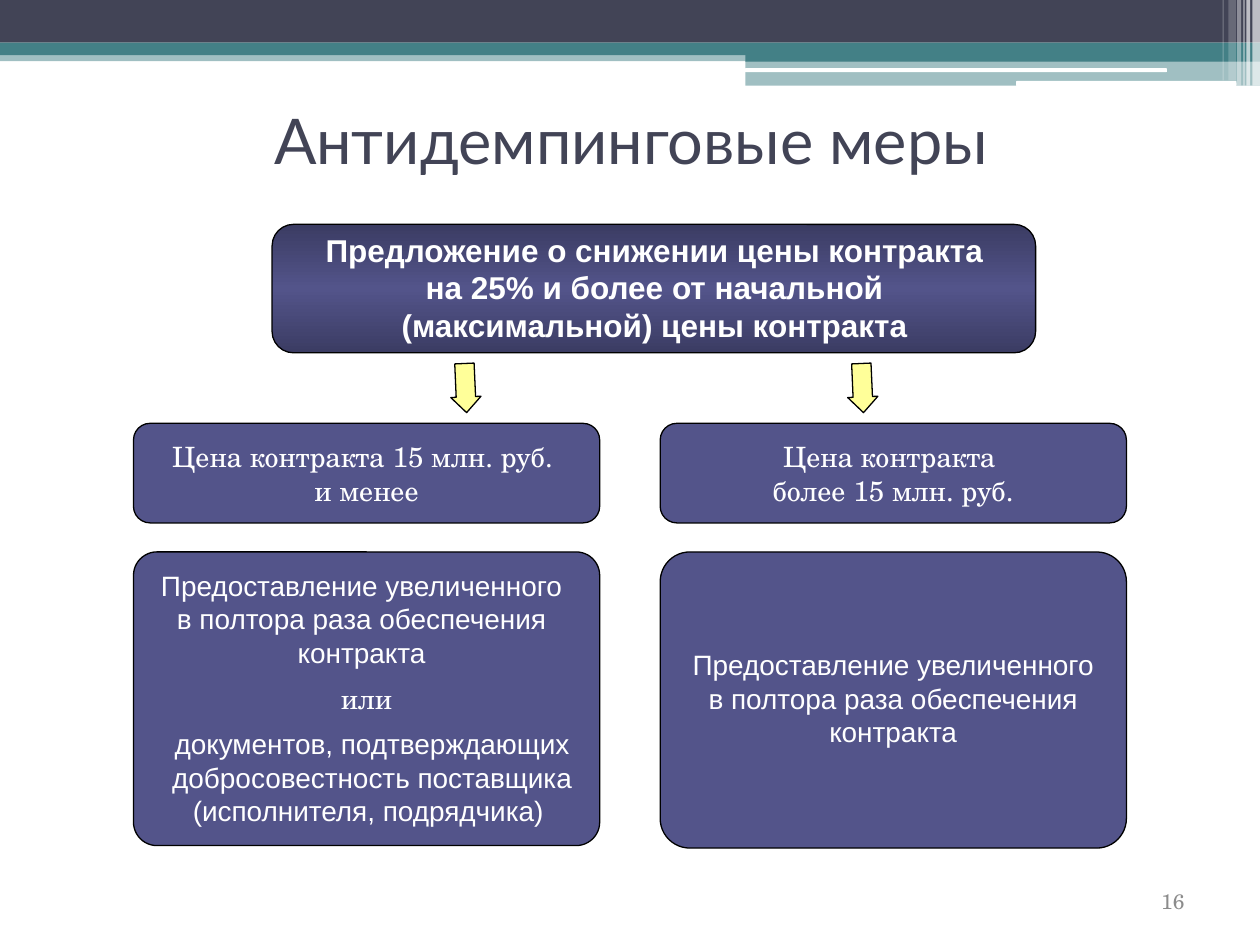
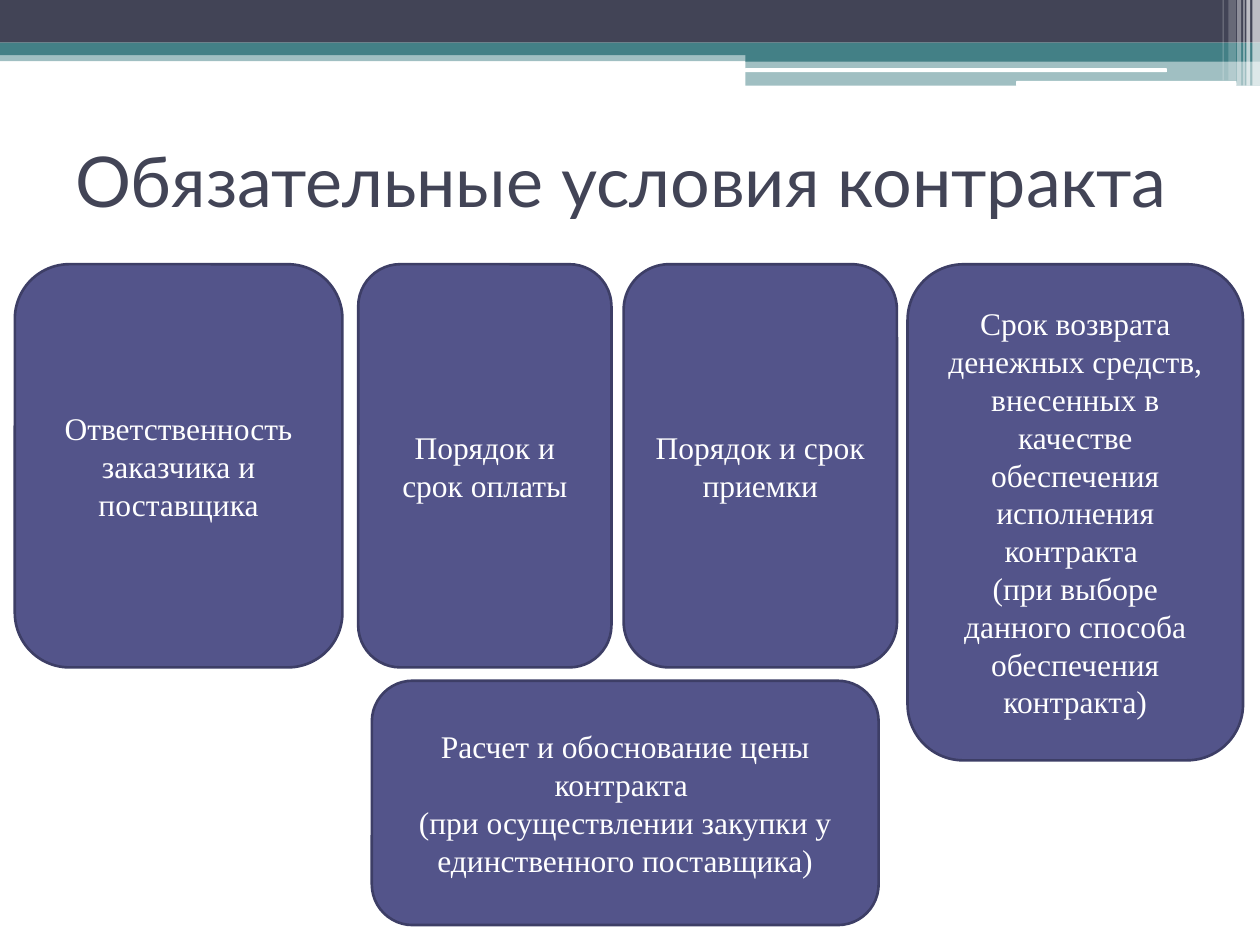
"""Builds two slides on contract rules: anti-dumping measures and required terms."""
import copy
import pptx
import pptx.util
import pptx.dml.color
import pptx.enum.shapes
import pptx.enum.text
import pptx.oxml.ns
import lxml.etree

Pt = pptx.util.Pt
RGB = pptx.dml.color.RGBColor
KIND = pptx.enum.shapes.MSO_SHAPE
ALIGN = pptx.enum.text.PP_ALIGN
ANCHOR = pptx.enum.text.MSO_ANCHOR
qn = pptx.oxml.ns.qn

INK = RGB(0x42, 0x44, 0x56)
TEAL = RGB(0x43, 0x80, 0x86)
WHITE = RGB(0xFF, 0xFF, 0xFF)
BLACK = RGB(0, 0, 0)
PLUM = RGB(0x53, 0x54, 0x8A)
DARK = RGB(0x3B, 0x3C, 0x63)
EDGE = RGB(0x3D, 0x3E, 0x66)
LEMON = RGB(0xFF, 0xFF, 0x99)
GREY = RGB(0x8C, 0x8C, 0x8C)

HEAD, BODY, SERIF, SANS = "Lato", "TeX Gyre Schola", "Times New Roman", "Arial"
WIDE, HIGH = 720, 540

BANDS = [
    (0, 28.8, WIDE, 6.2, TEAL, 50),
    (0, 0, WIDE, 24.4, INK, 100),
    (0, 24.4, WIDE, 7.2, TEAL, 100),
    (426, 28, 294, 7.2, TEAL, 100),
    (426, 34.8, 294, 14.2, TEAL, 50),
]
RULES = [(425.6, 39, 241.2, 2.2), (580.6, 46.3, 126, 2.9)]
BARS = [
    (715.7, 4.3, 49, 65),
    (712.2, 2.2, 49, 65),
    (710.5, 0.7, 49, 60),
    (707, 2.2, 49, 40),
    (702, 4.3, 46, 20),
    (698.6, 0.7, 46, 30),
]

OFFER = ["Предложение о снижении цены контракта на 25% и более от начальной (максимальной) цены контракта"]
PRICES = [
    ["Цена контракта 15 млн. руб. ", "и менее"],
    ["Цена контракта ", "более 15 млн. руб."],
]
PLEDGE = ["Предоставление увеличенного в полтора раза обеспечения контракта"]
PROOF = ["документов, подтверждающих добросовестность поставщика (исполнителя, подрядчика) "]
COLS = [76.3, 377.3]
COLWIDE = 266.4
ARROWS = [252, 478.8]

TERMS = [
    (8.5, 151, 187.2, 230.4, ["Ответственность заказчика и поставщика"]),
    (204.7, 151, 144.7, 230.4, ["Порядок и срок оплаты"]),
    (356.4, 151, 156.2, 230.4, ["Порядок и срок приемки"]),
    (518.6, 151, 191.7, 283.5, [
        "Срок возврата денежных средств, внесенных в качестве обеспечения исполнения контракта ",
        "(при выборе данного способа обеспечения контракта)"]),
    (212.5, 389, 289.6, 139.6, [
        "Расчет и обоснование цены контракта ",
        "(при осуществлении закупки у единственного поставщика)"]),
]


def place(box):
    """Turns four numbers into lengths."""
    return [Pt(part) for part in box]


def write(shape, lines, size, font, tint=WHITE, align=ALIGN.CENTER,
          anchor=ANCHOR.MIDDLE, wrap=True, bold=False):
    """Fills a shape with one run for each line of text."""
    frame = shape.text_frame
    frame.word_wrap = wrap
    frame.vertical_anchor = anchor
    for rank, line in enumerate(lines):
        para = frame.add_paragraph() if rank else frame.paragraphs[0]
        para.alignment = align
        run = para.add_run()
        run.text = line
        run.font.size = Pt(size)
        run.font.name = font
        run.font.bold = bold
        run.font.color.rgb = tint


def draw(slide, kind, box, tint, edge=None, thick=0.75, clear=100):
    """Adds a flat shape, with an edge and opacity if asked."""
    shape = slide.shapes.add_shape(kind, *place(box))
    shape.shadow.inherit = False
    shape.fill.solid()
    shape.fill.fore_color.rgb = tint
    if clear < 100:
        color = shape.element.spPr.find(".//" + qn("a:srgbClr"))
        lxml.etree.SubElement(color, qn("a:alpha")).set("val", str(clear * 1000))
    if edge is None:
        shape.line.fill.background()
    else:
        shape.line.color.rgb = edge
        shape.line.width = Pt(thick)
    return shape


def label(slide, box, lines, size, font, **style):
    """Adds a text box."""
    write(slide.shapes.add_textbox(*place(box)), lines, size, font, **style)


def shade(shape):
    """Gives a shape a gradient that is dark at both ends."""
    shape.fill.gradient()
    shape.fill.gradient_angle = 90
    stops = shape.element.spPr.find(".//" + qn("a:gsLst"))
    stops.insert(1, copy.deepcopy(stops[0]))
    for stop, tint, spot in zip(shape.fill.gradient_stops, (DARK, PLUM, DARK), (0, 0.5, 1)):
        stop.color.rgb = tint
        stop.position = spot


def start(deck, title, box, size, align):
    """Adds a slide with the shared bands and a title."""
    slide = deck.slides.add_slide(deck.slide_layouts[6])
    for *spot, tint, clear in BANDS:
        draw(slide, KIND.RECTANGLE, spot, tint, clear=clear)
    for spot in RULES:
        draw(slide, KIND.ROUNDED_RECTANGLE, spot, WHITE)
    for left, width, height, clear in BARS:
        draw(slide, KIND.RECTANGLE, (left, 0, width, height), WHITE, clear=clear)
    label(slide, box, [title], size, HEAD, tint=INK, align=align)
    return slide


def measures(deck):
    """Builds the slide on anti-dumping measures."""
    slide = start(deck, "Антидемпинговые меры", (36.7, 54.7, 648, 49.7), 36, ALIGN.CENTER)
    label(slide, (516.2, 500.4, 167.8, 28.8), ["16"], 12, BODY, tint=GREY, align=ALIGN.RIGHT)
    shade(draw(slide, KIND.ROUNDED_RECTANGLE, (155.5, 128.2, 436.3, 73.4), PLUM, BLACK))
    for left, lines in zip(COLS, PRICES):
        card = draw(slide, KIND.ROUNDED_RECTANGLE, (left, 241.9, COLWIDE, 56.9), PLUM, BLACK)
        write(card, lines, 16, BODY, wrap=False)
    for left in ARROWS:
        arrow = draw(slide, KIND.LEFT_ARROW, (left, 213.1, 28.1, 17.3), LEMON, BLACK)
        arrow.rotation = 267.5
        arrow.adjustments[0], arrow.adjustments[1] = 0.64, 0.52
    for left, height, bend, lines in zip(COLS, (167.8, 169.2), (0.08, 0.1), (["или"], [])):
        card = draw(slide, KIND.ROUNDED_RECTANGLE, (left, 315.4, COLWIDE, height), PLUM, BLACK)
        card.adjustments[0] = bend
        write(card, lines, 16, BODY, wrap=False)
    for spot, lines in [
        ((383, 366.5, 254.9, 64.8), PLEDGE),
        ((82.1, 321.1, 249.1, 64.8), PLEDGE),
        ((87.8, 411.8, 249.8, 64.8), PROOF),
    ]:
        label(slide, spot, lines, 16, SANS, anchor=ANCHOR.TOP)
    label(slide, (167, 128.2, 414, 72), OFFER, 18, SANS, anchor=ANCHOR.TOP, bold=True)


def terms(deck):
    """Builds the slide on required contract terms."""
    slide = start(deck, "Обязательные условия контракта", (36, 60.5, 648, 84.2), 40, ALIGN.LEFT)
    for *spot, lines in TERMS:
        card = draw(slide, KIND.ROUNDED_RECTANGLE, spot, PLUM, EDGE, 1.5)
        write(card, lines, 18, SERIF)


def main():
    """Builds and saves the deck."""
    deck = pptx.Presentation()
    deck.slide_width, deck.slide_height = Pt(WIDE), Pt(HIGH)
    measures(deck)
    terms(deck)
    deck.save("out.pptx")


if __name__ == "__main__":
    main()
